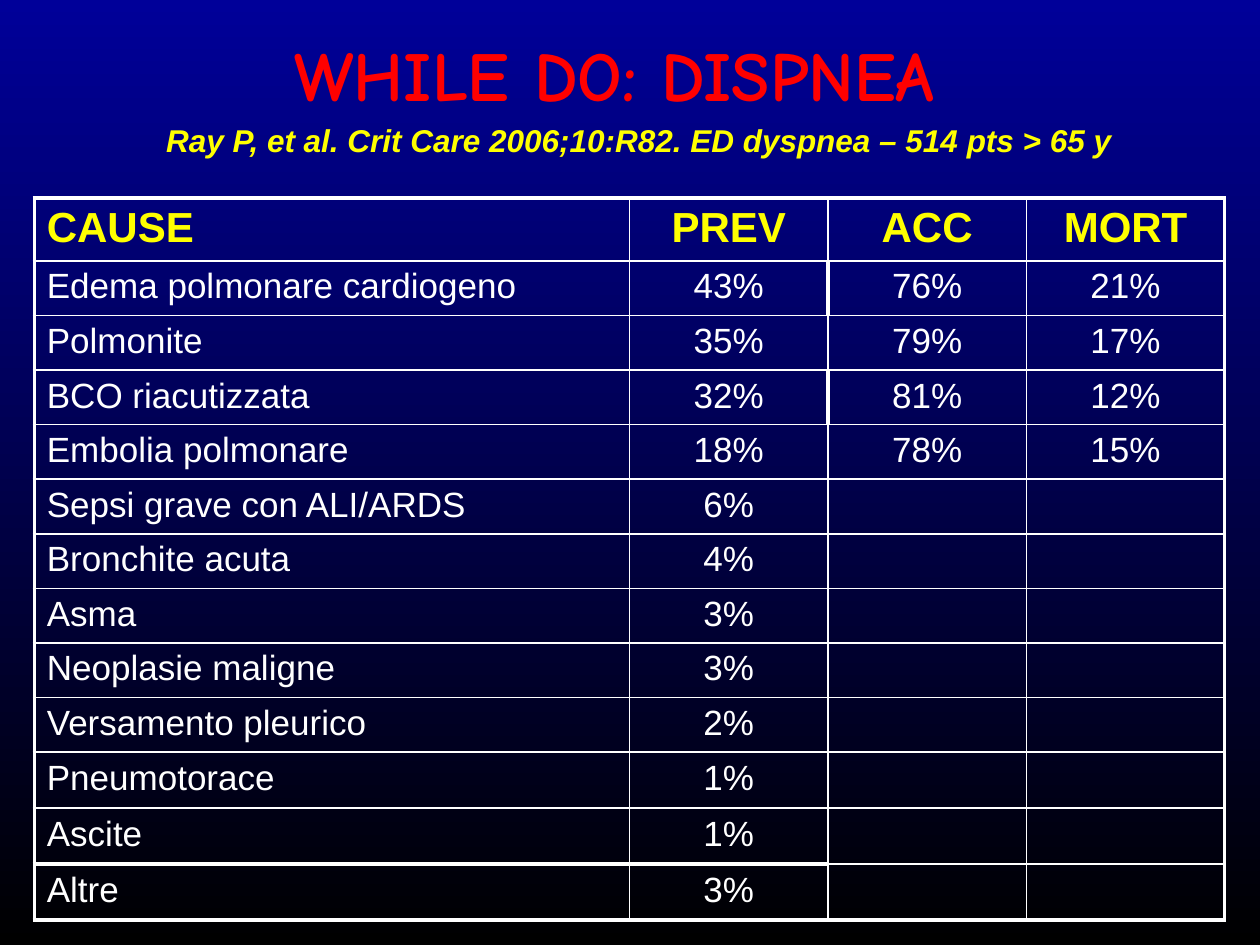
from dataclasses import dataclass

from lxml import etree
from pptx import Presentation
from pptx.dml.color import RGBColor
from pptx.enum.text import MSO_ANCHOR, MSO_AUTO_SIZE, PP_ALIGN
from pptx.oxml.ns import qn
from pptx.util import Cm, Pt

LEFT, CENTER = PP_ALIGN.LEFT, PP_ALIGN.CENTER
MIDDLE = MSO_ANCHOR.MIDDLE
GROW = MSO_AUTO_SIZE.SHAPE_TO_FIT_TEXT


@dataclass(frozen=True)
class TextStyle:
    font: str
    size: int
    color: str
    bold: bool = False
    italic: bool = False


@dataclass(frozen=True)
class Theme:
    top: str = "000099"
    bottom: str = "000000"
    line: str = "FFFFFF"
    thin: float = 1
    thick: float = 2.25
    title: TextStyle = TextStyle("Comic Neue", 40, "FF0000", bold=True)
    citation: TextStyle = TextStyle("Arial", 18, "FFFF00", bold=True, italic=True)
    header: TextStyle = TextStyle("Arial", 24, "FFFF00", bold=True)
    body: TextStyle = TextStyle("Arial", 20, "FFFFFF")


@dataclass(frozen=True)
class Cause:
    name: str
    prevalence: str
    accuracy: str = ""
    mortality: str = ""

    def texts(self) -> tuple:
        return self.name, self.prevalence, self.accuracy, self.mortality


THEME = Theme()
ROWS = [
    Cause("CAUSE", "PREV", "ACC", "MORT"),
    Cause("Edema polmonare cardiogeno", "43%", "76%", "21%"),
    Cause("Polmonite", "35%", "79%", "17%"),
    Cause("BCO riacutizzata", "32%", "81%", "12%"),
    Cause("Embolia polmonare", "18%", "78%", "15%"),
    Cause("Sepsi grave con ALI/ARDS", "6%"),
    Cause("Bronchite acuta", "4%"),
    Cause("Asma", "3%"),
    Cause("Neoplasie maligne", "3%"),
    Cause("Versamento pleurico", "2%"),
    Cause("Pneumotorace", "1%"),
    Cause("Ascite", "1%"),
    Cause("Altre", "3%"),
]
COLUMN_WIDTHS = [12, 4, 4, 4]
ROW_HEIGHTS = [1.27] + [1.1] * 9 + [1.13] * 3
# Thick inner rules: (row, column) of the cell after the rule
THICK_LEFT = {(1, 2), (3, 2)}
THICK_TOP = {(12, 0), (12, 1)}


def write(frame, text: str, style: TextStyle, align=LEFT):
    """Put one styled paragraph into a text frame."""
    para = frame.paragraphs[0]
    para.alignment = align
    para.font.name = style.font
    para.font.size = Pt(style.size)
    para.font.bold = style.bold
    para.font.italic = style.italic
    para.font.color.rgb = RGBColor.from_string(style.color)
    if text:
        para.add_run().text = text
    return para


def add_border(cell, side: str, thick: bool) -> None:
    width = Pt(THEME.thick if thick else THEME.thin)
    properties = cell._tc.get_or_add_tcPr()
    line = etree.SubElement(properties, qn(f"a:ln{side}"), w=str(width))
    fill = etree.SubElement(line, qn("a:solidFill"))
    etree.SubElement(fill, qn("a:srgbClr"), val=THEME.line)


def draw_borders(cell, row: int, column: int) -> None:
    last_row, last_column = len(ROWS) - 1, len(COLUMN_WIDTHS) - 1
    add_border(cell, "L", column == 0 or (row, column) in THICK_LEFT)
    add_border(cell, "R", column == last_column or (row, column + 1) in THICK_LEFT)
    add_border(cell, "T", row == 0 or (row, column) in THICK_TOP)
    add_border(cell, "B", row == last_row or (row + 1, column) in THICK_TOP)


def draw_background(page) -> None:
    fill = page.background.fill
    fill.gradient()
    fill.gradient_angle = 270
    for stop, color in zip(fill.gradient_stops, (THEME.top, THEME.bottom)):
        stop.color.rgb = RGBColor.from_string(color)


def draw_title(page, text: str) -> None:
    title = page.shapes.title
    title.left, title.top = Cm(2.16), Cm(0.53)
    title.width, title.height = Cm(20.96), Cm(1.9)
    title.text_frame.vertical_anchor = MIDDLE
    write(title.text_frame, text, THEME.title, CENTER)


def draw_table(page) -> None:
    frame = page.shapes.add_table(
        len(ROWS), len(COLUMN_WIDTHS), Cm(0.69), Cm(3.99),
        Cm(sum(COLUMN_WIDTHS)), Cm(sum(ROW_HEIGHTS)))
    table = frame.table
    table.first_row = table.horz_banding = False
    for column, width in zip(table.columns, COLUMN_WIDTHS):
        column.width = Cm(width)
    for row, height in zip(table.rows, ROW_HEIGHTS):
        row.height = Cm(height)
    for i, cause in enumerate(ROWS):
        style = THEME.body if i else THEME.header
        for j, text in enumerate(cause.texts()):
            cell = table.cell(i, j)
            para = write(cell.text_frame, text, style, CENTER if j else LEFT)
            para.space_before = Pt(style.size * 0.2)
            draw_borders(cell, i, j)
            cell.fill.background()


def draw_citation(page, text: str) -> None:
    box = page.shapes.add_textbox(Cm(3.1), Cm(2.31), Cm(19.84), Cm(1.02))
    box.text_frame.word_wrap = False
    box.text_frame.auto_size = GROW
    write(box.text_frame, text, THEME.citation)


def main() -> None:
    deck = Presentation()
    deck.slide_width, deck.slide_height = Cm(25.4), Cm(19.05)
    title_only = deck.slide_layouts[5]
    page = deck.slides.add_slide(title_only)
    draw_background(page)
    draw_title(page, "WHILE DO: DISPNEA ")
    draw_table(page)
    draw_citation(
        page, "Ray P, et al. Crit Care 2006;10:R82. ED dyspnea – 514 pts > 65 y")
    deck.save("out.pptx")


if __name__ == "__main__":
    main()
